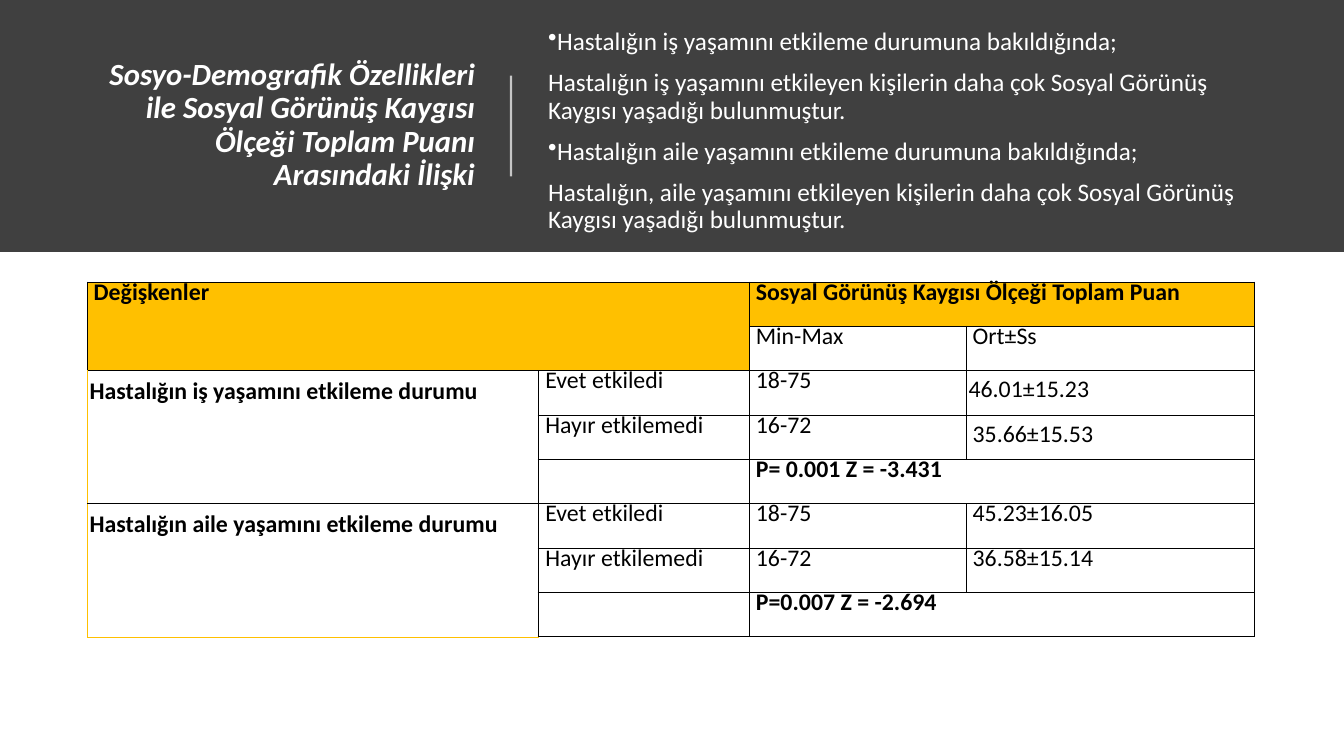
from dataclasses import dataclass

from lxml import etree
from pptx import Presentation
from pptx import util as u
from pptx.dml.color import RGBColor
from pptx.enum import shapes, text
from pptx.oxml import ns

Pt = u.Pt


@dataclass(frozen=True)
class Theme:
    font: str = "Calibri"
    dark: str = "404040"
    white: str = "FFFFFF"
    black: str = "000000"
    gold: str = "FFC000"
    title: float = 22
    body: float = 18
    cell: float = 17


@dataclass(frozen=True)
class Box:
    left: float
    top: float
    width: float
    height: float

    def points(self) -> list[u.Length]:
        return [Pt(v) for v in (self.left, self.top, self.width, self.height)]


@dataclass(frozen=True)
class Entry:
    row: int
    col: int
    words: str = ""
    bold: bool = False
    rows: int = 1
    cols: int = 1
    indent: float = 2.88
    middle: bool = False
    gold: bool = False


@dataclass(frozen=True)
class Group:
    label: str
    yes: str
    no: str
    result: str
    flush: bool = False
    middle: bool = False


THEME = Theme()
BAND = Box(0, 0, 960, 180)
TITLE = Box(62.64, 37.44, 283.68, 104.4)
BODY = Box(384.48, 18.72, 512.64, 150.48)
GRID = Box(62.64, 201.6, 833.76, 253.44)
WIDTHS = (321.84, 151.2, 154.8, 205.92)
ROWS = 8
HEAD = 2
STEP = 3

HEADING = ("Sosyo-Demografik Özellikleri ile Sosyal Görünüş Kaygısı "
           "Ölçeği Toplam Puanı Arasındaki İlişki")
NOTES = (
    ("Hastalığın iş yaşamını etkileme durumuna bakıldığında;", True),
    ("Hastalığın iş yaşamını etkileyen kişilerin daha çok Sosyal Görünüş "
     "Kaygısı yaşadığı bulunmuştur.", False),
    ("Hastalığın aile yaşamını etkileme durumuna bakıldığında;", True),
    ("Hastalığın, aile yaşamını etkileyen kişilerin daha çok Sosyal Görünüş "
     "Kaygısı yaşadığı bulunmuştur.", False),
)
HEADS = (
    Entry(0, 0, "Değişkenler", True, rows=2, cols=2, gold=True),
    Entry(0, 2, "Sosyal Görünüş Kaygısı Ölçeği Toplam Puan", True, cols=2, gold=True),
    Entry(1, 2, "Min-Max"),
    Entry(1, 3, "Ort±Ss"),
)
GROUPS = (
    Group("Hastalığın iş yaşamını etkileme durumu", "46.01±15.23", "35.66±15.53",
          "P= 0.001 Z = -3.431", flush=True, middle=True),
    Group("Hastalığın aile yaşamını etkileme durumu", "45.23±16.05", "36.58±15.14",
          "P=0.007 Z = -2.694"),
)


def paint(fill, tint: str) -> None:
    fill.solid()
    fill.fore_color.rgb = RGBColor.from_string(tint)


def style(para, size: float, tint: str, bold: bool = False, slant: bool = False) -> None:
    font = para.font
    font.name, font.size, font.bold, font.italic = THEME.font, Pt(size), bold, slant
    font.color.rgb = RGBColor.from_string(tint)


def add_frame(slide, box: Box):
    frame = slide.shapes.add_textbox(*box.points()).text_frame
    frame.word_wrap = True
    frame.vertical_anchor = text.MSO_ANCHOR.MIDDLE
    return frame


def draw_band(slide) -> None:
    band = slide.shapes.add_shape(shapes.MSO_SHAPE.RECTANGLE, *BAND.points())
    band.shadow.inherit = False
    paint(band.fill, THEME.dark)
    band.line.fill.background()


def draw_title(slide) -> None:
    para = add_frame(slide, TITLE).paragraphs[0]
    para.text = HEADING
    para.alignment = text.PP_ALIGN.RIGHT
    para.line_spacing = 0.9
    style(para, THEME.title, THEME.white, bold=True, slant=True)


def draw_rule(slide) -> None:
    rule = slide.shapes.add_connector(
        shapes.MSO_CONNECTOR.STRAIGHT, Pt(365), Pt(126), Pt(365), Pt(54))
    paint(rule.line.fill, THEME.white)
    rule.line.width = Pt(1.5)
    shade = next(rule.line._get_or_add_ln().iter(ns.qn("a:srgbClr")))
    etree.SubElement(shade, ns.qn("a:alpha"), val="70000")
    etree.SubElement(rule._element.spPr, ns.qn("a:effectLst"))


def draw_notes(slide) -> None:
    frame = add_frame(slide, BODY)
    for i, (words, dot) in enumerate(NOTES):
        para = frame.add_paragraph() if i else frame.paragraphs[0]
        para.text = words
        para.line_spacing = 0.9
        para.space_after = Pt(10)
        style(para, THEME.body, THEME.white)
        if dot:
            props = para._p.get_or_add_pPr()
            props.set("marL", "0")
            props.set("indent", str(-Pt(18)))
            mark = etree.Element(ns.qn("a:buChar"), char="•")
            props.insert_element_before(mark, "a:tabLst", "a:defRPr", "a:extLst")


def add_edge(cell, side: str, tint: str, width: float) -> None:
    line = etree.SubElement(cell._tc.get_or_add_tcPr(), ns.qn(f"a:ln{side}"),
                            w=str(Pt(width)))
    fill = etree.SubElement(line, ns.qn("a:solidFill"))
    etree.SubElement(fill, ns.qn("a:srgbClr"), val=tint)


def list_group(top: int, group: Group) -> list[Entry]:
    """Give the cells of one variable: its label, two answers and the test result."""
    return [
        Entry(top, 0, group.label, True, rows=STEP, indent=0),
        Entry(top, 1, "Evet etkiledi"),
        Entry(top, 2, "18-75"),
        Entry(top, 3, group.yes, indent=0 if group.flush else 2.88, middle=group.middle),
        Entry(top + 1, 1, "Hayır etkilemedi"),
        Entry(top + 1, 2, "16-72"),
        Entry(top + 1, 3, group.no, middle=group.middle),
        Entry(top + 2, 1),
        Entry(top + 2, 2, group.result, True, cols=2),
    ]


def fill_cell(grid, item: Entry) -> None:
    """Frame and fill every cell the entry spans, then merge them and set the text."""
    label = item.rows == STEP
    last = item.row + item.rows == ROWS
    pale = {"L"} | ({"B"} if last else set()) if label else set()
    for row in range(item.row, item.row + item.rows):
        for col in range(item.col, item.col + item.cols):
            cell = grid.cell(row, col)
            for side in "LRTB":
                tint, width = (THEME.gold, 0.5) if side in pale else (THEME.black, 1)
                add_edge(cell, side, tint, width)
            if item.gold:
                paint(cell.fill, THEME.gold)
            else:
                cell.fill.background()
    cell = grid.cell(item.row, item.col)
    if item.rows * item.cols > 1:
        cell.merge(grid.cell(item.row + item.rows - 1, item.col + item.cols - 1))
    if not item.words:
        return
    cell.margin_left, cell.margin_right = (
        (Pt(2.16), Pt(5.76)) if item.col == 1 else (Pt(1.44), Pt(1.44)))
    cell.margin_top = cell.margin_bottom = Pt(1.44)
    cell.vertical_anchor = text.MSO_ANCHOR.MIDDLE if item.middle else text.MSO_ANCHOR.TOP
    para = cell.text_frame.paragraphs[0]
    para.text = item.words
    para.line_spacing = 1.15 if label else Pt(16)
    para.space_after = Pt(10)
    para._p.get_or_add_pPr().set("marL", str(Pt(item.indent)))
    style(para, THEME.cell, THEME.black, item.bold)


def draw_grid(slide) -> None:
    grid = slide.shapes.add_table(ROWS, len(WIDTHS), *GRID.points()).table
    grid.first_row = grid.horz_banding = False
    for col, width in zip(grid.columns, WIDTHS):
        col.width = Pt(width)
    items = list(HEADS)
    for i, group in enumerate(GROUPS):
        items += list_group(HEAD + i * STEP, group)
    for item in items:
        fill_cell(grid, item)


def main() -> None:
    deck = Presentation()
    deck.slide_width, deck.slide_height = Pt(960), Pt(540)
    slide = deck.slides.add_slide(deck.slide_layouts[6])
    for draw in (draw_band, draw_title, draw_rule, draw_notes, draw_grid):
        draw(slide)
    deck.save("out.pptx")


if __name__ == "__main__":
    main()
